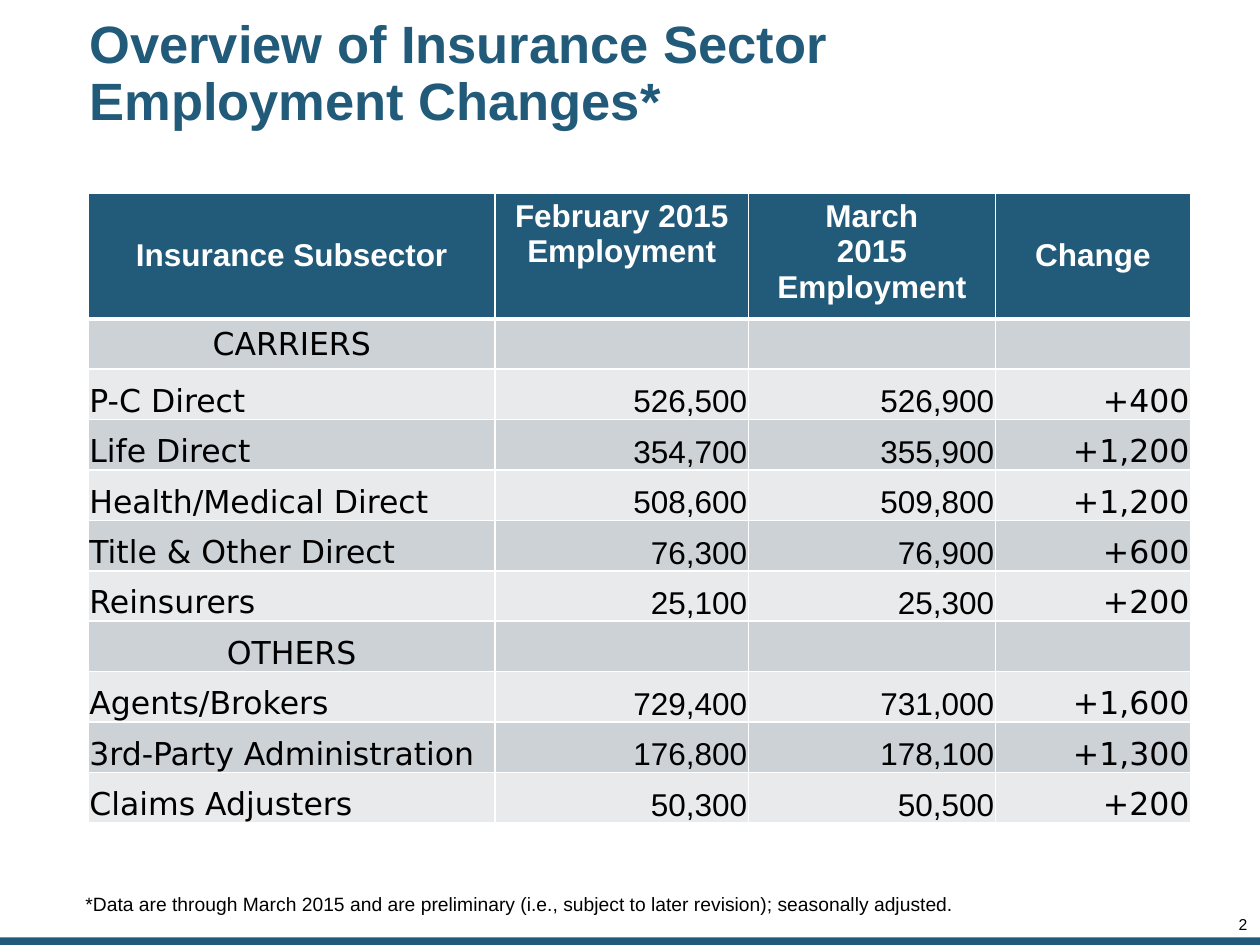
"""Build the insurance sector employment slide."""
from lxml.etree import SubElement
from pptx import Presentation
from pptx.dml.color import RGBColor
from pptx.enum.shapes import MSO_SHAPE
from pptx.enum.text import MSO_ANCHOR as ANCHOR, PP_ALIGN as ALIGN
from pptx.oxml.ns import qn
from pptx.util import Inches, Pt

BLUE, WHITE, BLACK = "225A7A", "FFFFFF", "000000"
BANDS = ["CDD2D7", "E8EAEC"]
SIDES = ("left", "top", "right", "bottom")


def rgb(value):
    return RGBColor.from_string(value)


def write(tf, text, color, align=ALIGN.LEFT, spacing=None, **font):
    for i, line in enumerate(text.split("\n")):
        p = tf.add_paragraph() if i else tf.paragraphs[0]
        p.alignment = align
        p.line_spacing = spacing
        r = p.add_run()
        r.text = line
        r.font.color.rgb = rgb(color)
        for name, value in font.items():
            setattr(r.font, name, value)


prs = Presentation()
prs.slide_width, prs.slide_height = Inches(10), Inches(7.5)
s = prs.slides.add_slide(prs.slide_layouts[6])

bar = s.shapes.add_shape(MSO_SHAPE.RECTANGLE, Inches(0), Inches(7.44), Inches(10), Inches(0.06))
bar.shadow.inherit = False
bar.fill.solid()
bar.fill.fore_color.rgb = rgb(BLUE)
bar.line.fill.background()

texts = [
    ("2", (9.41, 7.28, 0.49, 0.13), (0, 0), ANCHOR.TOP,
     {"color": BLACK, "align": ALIGN.RIGHT, "spacing": 0.85, "size": Pt(9)}),
    ("Overview of Insurance Sector Employment Changes*", (0.66, 0.25, 7.75, 0.69),
     (0.05, 0.05), ANCHOR.MIDDLE,
     {"color": BLUE, "spacing": 0.9, "size": Pt(30), "bold": True}),
    ("*Data are through March 2015 and are preliminary (i.e., subject to later revision); "
     "seasonally adjusted.", (0.58, 7.03, 9.04, 0.28), (0.1, 0.05), ANCHOR.TOP,
     {"color": BLACK, "size": Pt(11)}),
]
for text, box, (side, edge), anchor, style in texts:
    tf = s.shapes.add_textbox(*map(Inches, box)).text_frame
    tf.word_wrap = True
    tf.vertical_anchor = anchor
    for name, inset in zip(SIDES, (side, edge, side, edge)):
        setattr(tf, f"margin_{name}", Inches(inset))
    write(tf, text, name="Arial", **style)

rows = [
    ("Insurance Subsector", "February 2015\nEmployment", "March\n2015\nEmployment", "Change"),
    ("CARRIERS", "", "", ""),
    ("P-C Direct", "526,500", "526,900", "+400"),
    ("Life Direct", "354,700", "355,900", "+1,200"),
    ("Health/Medical Direct", "508,600", "509,800", "+1,200"),
    ("Title & Other Direct", "76,300", "76,900", "+600"),
    ("Reinsurers", "25,100", "25,300", "+200"),
    ("OTHERS", "", "", ""),
    ("Agents/Brokers", "729,400", "731,000", "+1,600"),
    ("3rd-Party Administration", "176,800", "178,100", "+1,300"),
    ("Claims Adjusters", "50,300", "50,500", "+200"),
]
table = s.shapes.add_table(len(rows), 4, Inches(0.7), Inches(1.53), Inches(8.75), Inches(5)).table
for column, width in zip(table.columns, (3.23, 2.01, 1.96, 1.55)):
    column.width = Inches(width)

for i, row in enumerate(rows):
    head = i == 0
    table.rows[i].height = Inches(1 if head else 0.4)
    for j, text in enumerate(row):
        cell = table.cell(i, j)
        insets = (0.1, 0.05, 0.1, 0.05) if head else (0.01, 0.01, 0.01, 0)
        for name, inset in zip(SIDES, insets):
            setattr(cell, f"margin_{name}", Inches(inset))

        tcPr = cell._tc.get_or_add_tcPr()
        for tag in ("lnL", "lnR", "lnT", "lnB"):
            thick = (head and tag == "lnB") or (i == 1 and tag == "lnT")
            ln = SubElement(tcPr, qn(f"a:{tag}"), w=str(Pt(3 if thick else 1)))
            SubElement(SubElement(ln, qn("a:solidFill")), qn("a:srgbClr"), val=WHITE)
        cell.fill.solid()
        cell.fill.fore_color.rgb = rgb(BLUE if head else BANDS[(i - 1) % 2])

        if head:
            cell.vertical_anchor = ANCHOR.TOP if j in (1, 2) else ANCHOR.MIDDLE
        else:
            cell.vertical_anchor = ANCHOR.MIDDLE if i == 1 else ANCHOR.BOTTOM
        if head or not row[1]:
            align = ALIGN.CENTER
        else:
            align = ALIGN.RIGHT if j else ALIGN.LEFT
        if text:
            write(cell.text_frame, text, WHITE if head else BLACK, align, size=Pt(18), bold=head,
                  name="Arial" if head or j in (1, 2) else "DejaVu Sans")

prs.save("out.pptx")
